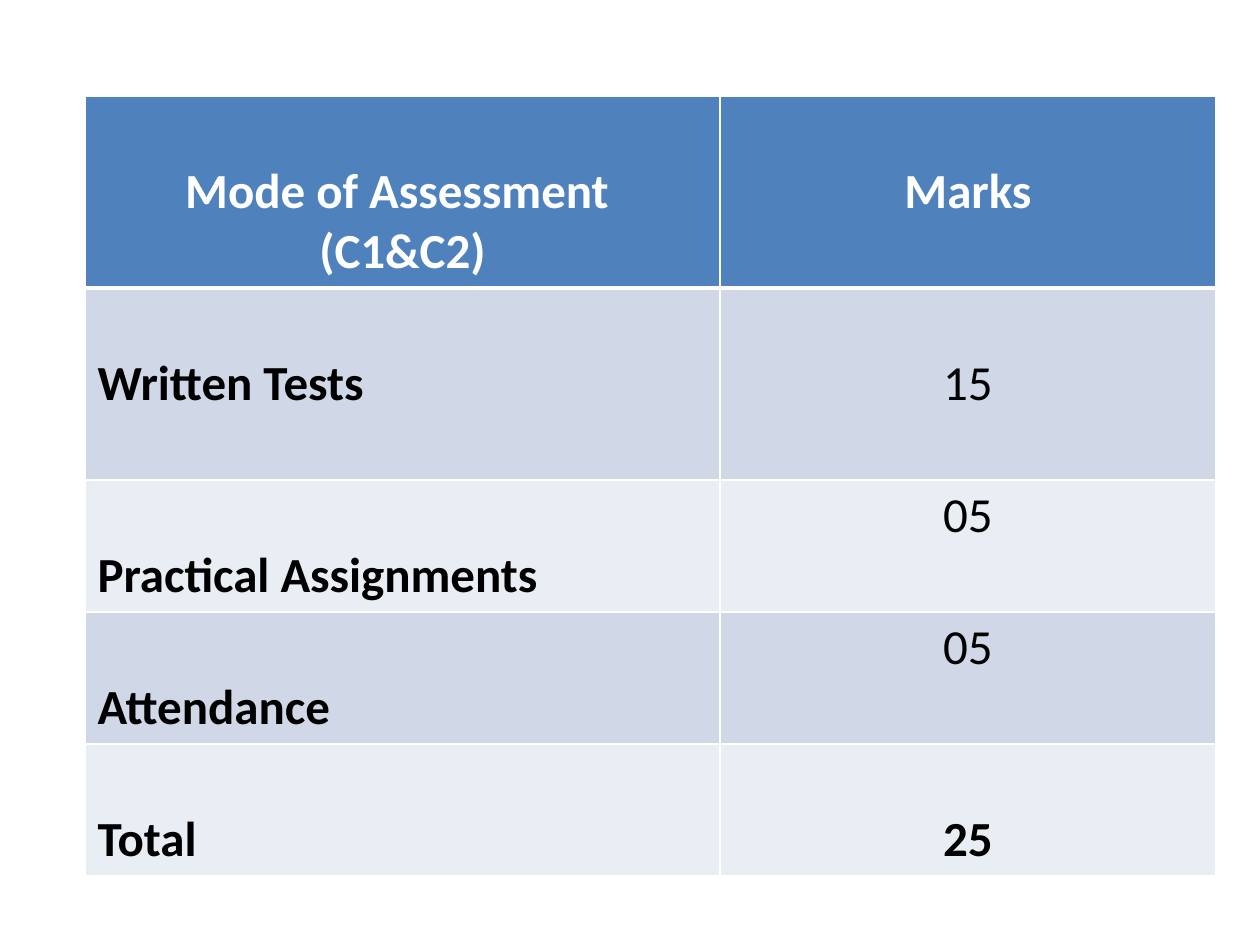
from lxml import etree
from pptx import Presentation
from pptx.dml.color import RGBColor
from pptx.enum.text import PP_ALIGN
from pptx.oxml.ns import qn
from pptx.util import Emu, Pt

LEFT, CENTER = PP_ALIGN.LEFT, PP_ALIGN.CENTER
WHITE = RGBColor(0xFF, 0xFF, 0xFF)
BLACK = RGBColor(0x00, 0x00, 0x00)
HEADER_BLUE = RGBColor(0x4F, 0x81, 0xBD)
BANDS = RGBColor(0xD0, 0xD8, 0xE8), RGBColor(0xE9, 0xED, 0xF4)

# Content: the lines of each cell
HEADERS = [["Mode of Assessment ", "(C1&C2)"], ["Marks"]]
ROWS = [
    [["Written Tests"], ["15"]],
    [["Practical Assignments"], ["05"]],
    [["Attendance"], ["05"]],
    [["Total"], ["25"]],
]
TOP_MARKS_ROWS = (2, 3)  # marks that sit at the top of their cell
TOTAL_ROW = len(ROWS)

# Layout in px
PX_PER_INCH = 126
SLIDE_SIZE = 1260, 945
TABLE_LEFT, TABLE_TOP = 85, 96
COLUMN_WIDTHS = [635, 496]
ROW_HEIGHTS = [192, 192, 132, 132, 132]
MARGIN, LOW_MARGIN = 6, 66


def px(length):
    return Emu(round(length * 914400 / PX_PER_INCH))


def add_borders(cell, widths):
    properties = cell._tc.get_or_add_tcPr()
    for side, width in widths.items():
        line = etree.SubElement(properties, qn(f"a:ln{side}"), w=str(Pt(width)))
        fill = etree.SubElement(line, qn("a:solidFill"))
        etree.SubElement(fill, qn("a:srgbClr"), val=str(WHITE))


def fill_cell(cell, lines, row, column):
    is_header = row == 0
    add_borders(cell, {"L": 1, "R": 1, "T": 3 if row == 1 else 1, "B": 3 if is_header else 1})
    cell.fill.solid()
    cell.fill.fore_color.rgb = HEADER_BLUE if is_header else BANDS[(row - 1) % 2]
    at_top = column == 1 and row in TOP_MARKS_ROWS
    cell.margin_top = px(MARGIN if at_top else LOW_MARGIN)
    cell.margin_bottom = px(MARGIN)
    cell.text = "\n".join(lines)
    for paragraph in cell.text_frame.paragraphs:
        paragraph.alignment = CENTER if is_header or column == 1 else LEFT
        font = paragraph.font
        font.name = "Calibri"
        font.size = Pt(28)
        font.bold = column == 0 or row in (0, TOTAL_ROW)
        font.color.rgb = WHITE if is_header else BLACK


presentation = Presentation()
presentation.slide_width, presentation.slide_height = map(px, SLIDE_SIZE)
slide = presentation.slides.add_slide(presentation.slide_layouts[6])

# Marks table
table = slide.shapes.add_table(
    len(ROW_HEIGHTS), len(COLUMN_WIDTHS), px(TABLE_LEFT), px(TABLE_TOP),
    px(sum(COLUMN_WIDTHS)), px(sum(ROW_HEIGHTS))).table
for table_column, width in zip(table.columns, COLUMN_WIDTHS):
    table_column.width = px(width)
for table_row, height in zip(table.rows, ROW_HEIGHTS):
    table_row.height = px(height)
for row, cells in enumerate([HEADERS, *ROWS]):
    for column, lines in enumerate(cells):
        fill_cell(table.cell(row, column), lines, row, column)

presentation.save("out.pptx")
